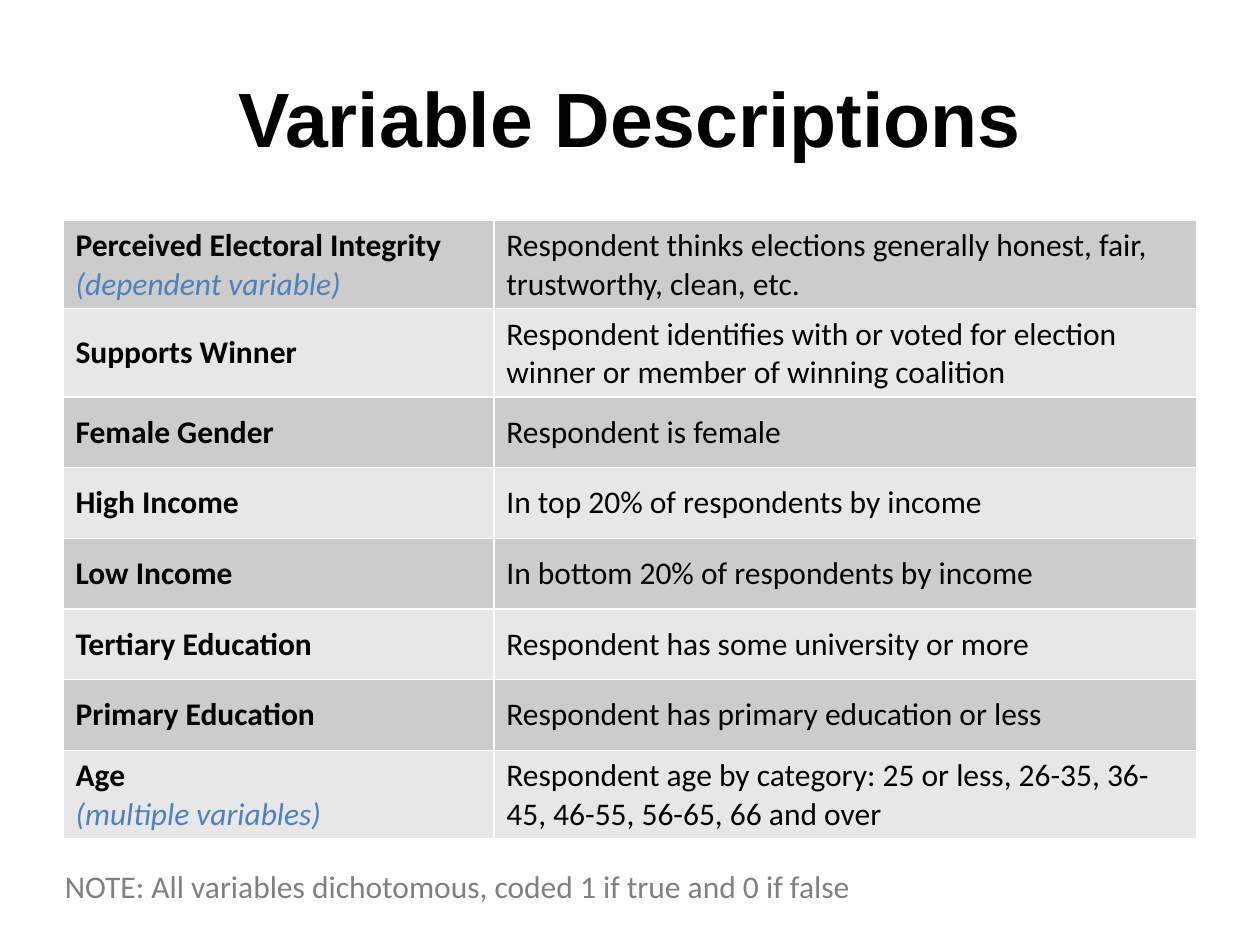
from lxml.etree import SubElement
from pptx import Presentation
from pptx.dml.color import RGBColor
from pptx.enum.text import MSO_ANCHOR, PP_ALIGN
from pptx.oxml.ns import qn
from pptx.util import Pt

TITLE = "Variable Descriptions"
NOTE = "NOTE: All variables dichotomous, coded 1 if true and 0 if false"
ROWS = [
    ("Perceived Electoral Integrity", "(dependent variable)",
     "Respondent thinks elections generally honest, fair, trustworthy, clean, etc."),
    ("Supports Winner", "",
     "Respondent identifies with or voted for election winner or member of winning coalition"),
    ("Female Gender", "", "Respondent is female"),
    ("High Income", "", "In top 20% of respondents by income"),
    ("Low Income", "", "In bottom 20% of respondents by income"),
    ("Tertiary Education", "", "Respondent has some university or more"),
    ("Primary Education", "", "Respondent has primary education or less"),
    ("Age", "(multiple variables)",
     "Respondent age by category: 25 or less, 26-35, 36-45, 46-55, 56-65, 66 and over"),
]
COLS = (246.2, 401.8)
TALL, LOW = 46.8, 40.4
WRAP = 50

THEME = {
    "head": "Arial", "body": "Calibri", "big": 44, "size": 18,
    "ink": "000000", "hint": "4F81BD", "note": "808080",
    "bands": ("CCCCCC", "E7E7E7"), "edge": "FFFFFF",
}


def write(para, text, font=THEME["body"], size=THEME["size"],
          color=THEME["ink"], bold=False, ital=False):
    run = para.add_run()
    run.text = text
    run.font.name = font
    run.font.size = Pt(size)
    run.font.bold = bold
    run.font.italic = ital
    run.font.color.rgb = RGBColor.from_string(color)


def add_box(slide, left, top, width, height, anchor=MSO_ANCHOR.TOP):
    box = slide.shapes.add_textbox(Pt(left), Pt(top), Pt(width), Pt(height))
    frame = box.text_frame
    frame.word_wrap = True
    frame.vertical_anchor = anchor
    return frame.paragraphs[0]


def style(cell, color):
    props = cell._tc.get_or_add_tcPr()
    for side in ("lnL", "lnR", "lnT", "lnB"):
        line = SubElement(props, qn(f"a:{side}"), w=str(Pt(1)))
        fill = SubElement(line, qn("a:solidFill"))
        SubElement(fill, qn("a:srgbClr"), val=THEME["edge"])
    cell.fill.solid()
    cell.fill.fore_color.rgb = RGBColor.from_string(color)
    cell.vertical_anchor = MSO_ANCHOR.MIDDLE


def add_grid(slide, left, top):
    highs = [TALL if len(text) > WRAP else LOW for _, _, text in ROWS]
    grid = slide.shapes.add_table(
        len(ROWS), len(COLS), Pt(left), Pt(top), Pt(sum(COLS)), Pt(sum(highs))).table
    grid.first_row = grid.horz_banding = False
    for col, width in zip(grid.columns, COLS):
        col.width = Pt(width)
    for num, (name, hint, text) in enumerate(ROWS):
        row = grid.rows[num]
        row.height = Pt(highs[num])
        for cell in row.cells:
            style(cell, THEME["bands"][num % 2])
        key, desc = [cell.text_frame.paragraphs[0] for cell in row.cells]
        write(key, name, bold=True)
        if hint:
            key.add_line_break()
            write(key, hint, color=THEME["hint"], ital=True)
        write(desc, text)


def main():
    deck = Presentation()
    deck.slide_width, deck.slide_height = Pt(720), Pt(540)
    slide = deck.slides.add_slide(deck.slide_layouts[6])
    title = add_box(slide, 36, 21.6, 648, 90, MSO_ANCHOR.MIDDLE)
    title.alignment = PP_ALIGN.CENTER
    write(title, TITLE, font=THEME["head"], size=THEME["big"], bold=True)
    add_grid(slide, 36, 126)
    write(add_box(slide, 30, 492, 654, 29), NOTE, color=THEME["note"])
    deck.save("out.pptx")


if __name__ == "__main__":
    main()
